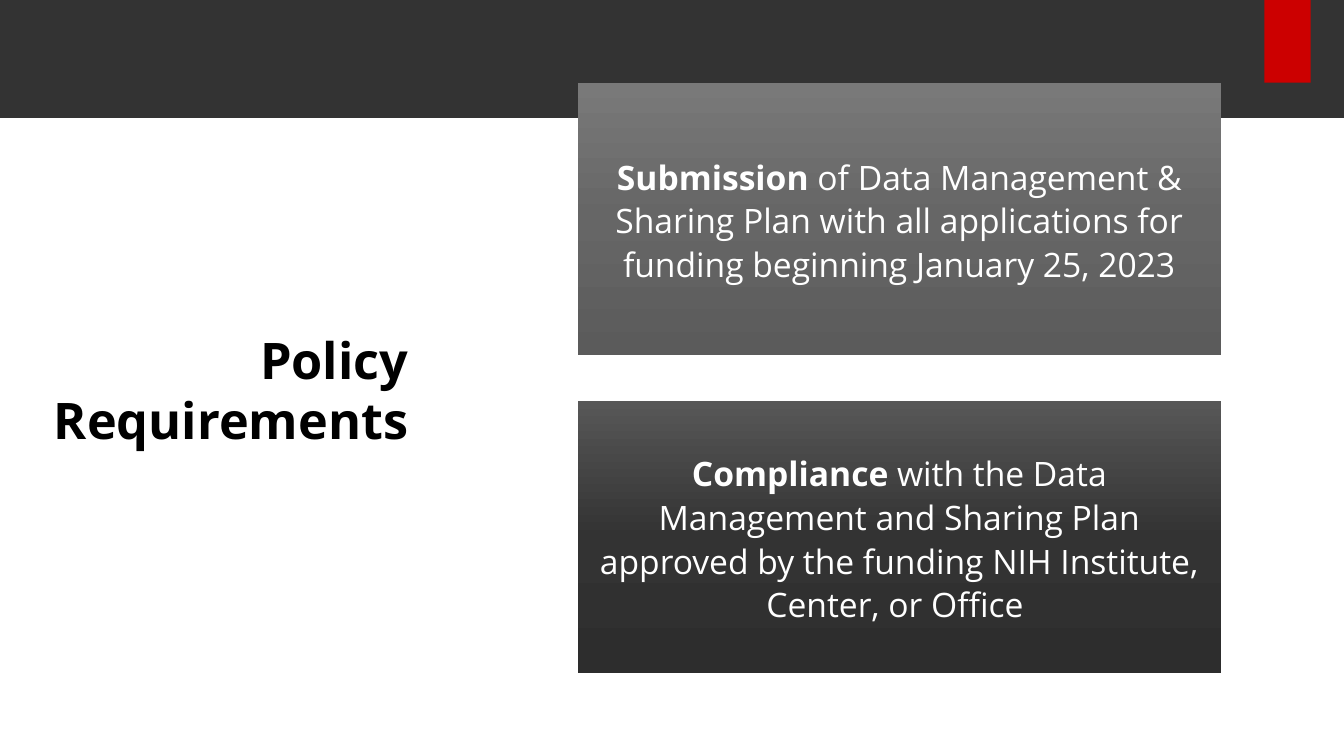
import copy

from pptx import Presentation
from pptx import util as u
from pptx.dml.color import RGBColor
from pptx.enum import shapes, text

BLACK = RGBColor(0x00, 0x00, 0x00)
WHITE = RGBColor(0xFF, 0xFF, 0xFF)
CHARCOAL = RGBColor(0x33, 0x33, 0x33)
RED = RGBColor(0xCC, 0x00, 0x00)
GRAY_STOPS = (RGBColor(0x79, 0x79, 0x79), RGBColor(0x66, 0x66, 0x66), RGBColor(0x5B, 0x5B, 0x5B))
DARK_STOPS = (RGBColor(0x57, 0x57, 0x57), CHARCOAL, RGBColor(0x2D, 0x2D, 0x2D))

CARD_LEFT, CARD_TOP, CARD_WIDTH, CARD_HEIGHT, CARD_PITCH = 5.73, 0.82, 6.38, 2.7, 3.16
REQUIREMENTS = [
    ("Submission", " of Data Management & Sharing Plan with all applications for "
     "funding beginning January 25, 2023", GRAY_STOPS),
    ("Compliance", " with the Data Management and Sharing Plan approved by the "
     "funding NIH Institute, Center, or Office ", DARK_STOPS),
]


class SlideBuilder:
    """Draws bands, gradient cards and the title on one slide in a shared style."""

    font = "Open Sans"

    def __init__(self, s):
        self.s = s

    def rect(self, left, top, width, height):
        sp = self.s.shapes.add_shape(
            shapes.MSO_SHAPE.RECTANGLE,
            *(u.Inches(v) for v in (left, top, width, height)))
        sp.shadow.inherit = False
        sp.line.fill.background()
        return sp

    def band(self, left, top, width, height, color):
        sp = self.rect(left, top, width, height)
        sp.fill.solid()
        sp.fill.fore_color.rgb = color

    def frame(self, sp, anchor, inset):
        tf = sp.text_frame
        tf.word_wrap = True
        tf.vertical_anchor = anchor
        tf.margin_left = tf.margin_right = u.Inches(inset)
        tf.margin_top = tf.margin_bottom = u.Inches(inset)
        return tf

    def style(self, r, size, color, bold):
        r.font.name = self.font
        r.font.size = u.Pt(size)
        r.font.color.rgb = color
        r.font.bold = bold

    def title(self, left, top, width, height, words):
        sp = self.s.shapes.add_textbox(*(u.Inches(v) for v in (left, top, width, height)))
        tf = self.frame(sp, text.MSO_ANCHOR.BOTTOM, 0)
        tf.text = words
        p = tf.paragraphs[0]
        p.alignment = text.PP_ALIGN.RIGHT
        self.style(p.runs[0], 36, BLACK, True)

    def gradient(self, sp, colors):
        sp.fill.gradient()
        sp.fill.gradient_angle = 270
        first = sp.fill.gradient_stops[0]._gs
        first.addnext(copy.deepcopy(first))
        for i, (stop, color) in enumerate(zip(sp.fill.gradient_stops, colors)):
            stop.position = i / 2
            stop.color.rgb = color

    def card(self, left, top, width, height, lead, rest, colors):
        sp = self.rect(left, top, width, height)
        self.gradient(sp, colors)
        p = self.frame(sp, text.MSO_ANCHOR.MIDDLE, 0.1).paragraphs[0]
        p.alignment = text.PP_ALIGN.CENTER
        p.line_spacing = 1.08
        for words, bold in ((lead, True), (rest, False)):
            r = p.add_run()
            r.text = words
            self.style(r, 24, WHITE, bold)


def main():
    prs = Presentation()
    prs.slide_width, prs.slide_height = u.Inches(13.33), u.Inches(7.5)
    slide = SlideBuilder(prs.slides.add_slide(prs.slide_layouts[6]))
    slide.band(0, 0, 13.33, 1.17, CHARCOAL)
    slide.band(12.54, 0, 0.46, 0.82, RED)
    slide.title(0, 1.84, 4.05, 2.62, "Policy Requirements")
    for i, (lead, rest, colors) in enumerate(REQUIREMENTS):
        slide.card(CARD_LEFT, CARD_TOP + i * CARD_PITCH, CARD_WIDTH, CARD_HEIGHT,
                   lead, rest, colors)
    prs.save("out.pptx")


if __name__ == "__main__":
    main()
